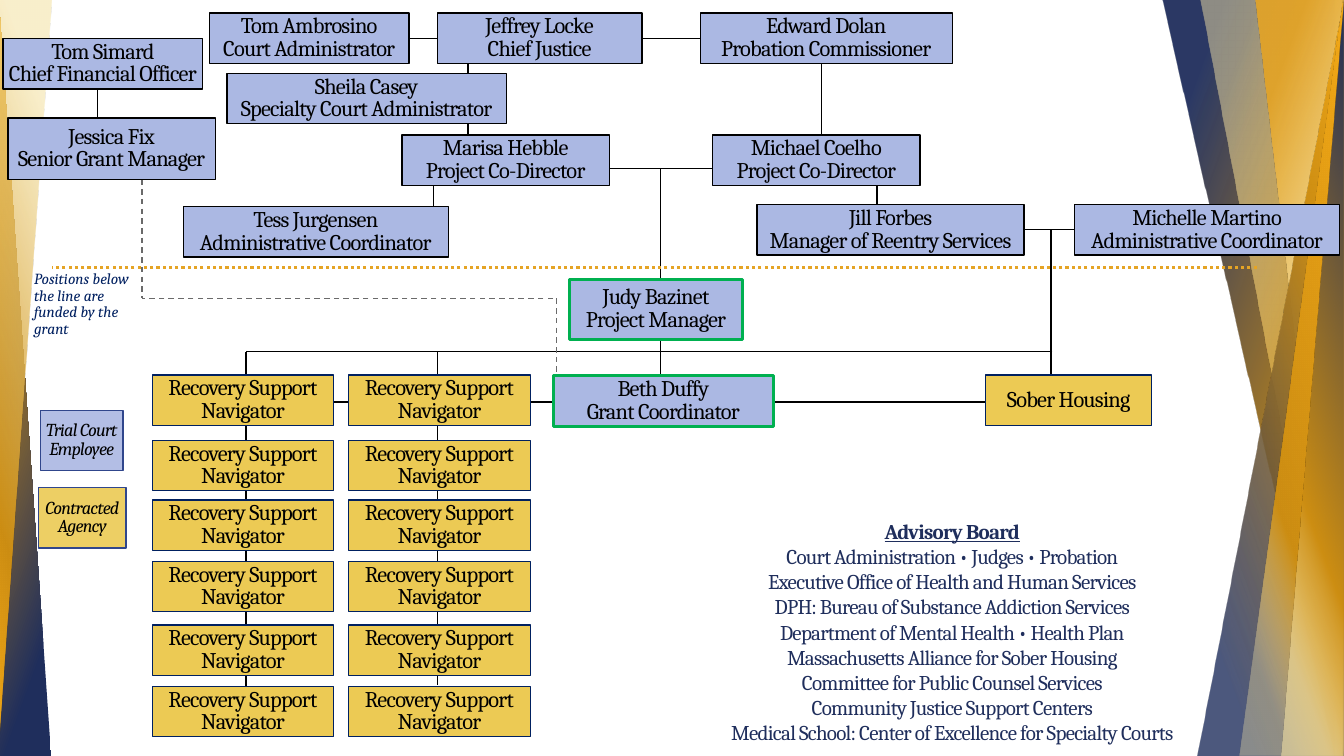
"""Build the organisation chart slide of a court-based recovery grant."""
from dataclasses import dataclass

from pptx import Presentation
from pptx import util as u
from pptx.dml.color import RGBColor
from pptx.enum import dml, shapes, text
from pptx.oxml import parse_xml
from pptx.oxml.ns import qn

NS = 'xmlns:a="http://schemas.openxmlformats.org/drawingml/2006/main"'


@dataclass(frozen=True)
class Theme:
    """Colours, font and sizes."""
    font: str = "Cambria"
    court: str = "ABB8E3"
    agency: str = "ECCA54"
    black: str = "000000"
    green: str = "00B050"
    navy: str = "002060"
    ink: str = "1F2E5C"
    key: str = "30468C"
    gold: str = "E5A425"
    grey: str = "6A6A6A"
    box_pt: float = 16
    key_pt: float = 13
    note_pt: float = 11
    board_pt: float = 15


T = Theme()
W, H = 33.87, 19.05
ROW = 1.27

# left, width, rotation, mirrored, gradient stops (position, colour, opacity)
FACETS = [
    (32, 1.85, 180, False, [(14, "E5A425", 100), (49, "CD8E13", 100), (90, "1F2E5C", 100)]),
    (29.29, 4.34, 180, False, [(14, "1F2E5C", 94), (74, "CD8E13", 100), (100, "F3A917", 100)]),
    (30.25, 3.61, 180, False, [(14, "F5E3A5", 49), (74, "CD8E13", 100), (100, "F3A917", 100)]),
    (31.65, 2.21, 180, False, [(14, "E5A425", 89), (33, "EDC56B", 100), (54, "F7EABA", 100),
                               (100, "F3A917", 100)]),
    (30.18, 3.68, 0, True, [(14, "1F2E5C", 79), (74, "CD8E13", 100), (100, "F3A917", 100)]),
    (31.24, 2.59, 0, True, [(14, "F5E3A5", 37), (34, "CD8E13", 100), (100, "F3A917", 100)]),
    (32.31, 1.55, 0, True, [(14, "F5E3A5", 57), (34, "CD8E13", 100), (100, "1F2E5C", 100)]),
    (-0.03, 1.32, 0, False, [(14, "1F2E5C", 100), (74, "CD8E13", 100), (100, "F3A917", 100)]),
    (-0.03, 1.32, 180, True, [(14, "F5E3A5", 56), (74, "CD8E13", 100), (100, "F3A917", 100)]),
]

LINKS = [
    (11.02, 8.86, 11.02, 17.25), (6.2, 8.86, 6.2, 17.75), (10.92, 4.57, 10.92, 5.69),
    (11.79, 1.35, 11.79, 3.51), (11.58, 0.97, 9.63, 0.97), (18.16, 0.97, 16.18, 0.97),
    (20.7, 1.57, 20.7, 3.86), (18.16, 4.24, 15.37, 4.24), (16.64, 4.24, 16.64, 10.06),
    (27.69, 10.13, 5.59, 10.13), (26.52, 8.86, 6.2, 8.86), (26.49, 9.45, 26.49, 5.79),
    (27.08, 5.79, 25.81, 5.79), (22.1, 4.67, 22.1, 5.16), (2.46, 1.35, 2.46, 2.95),
]
GRANT_LINKS = [(3.58, 4.52, 3.58, 7.52), (14.02, 7.52, 14.02, 9.45), (13.94, 7.52, 3.58, 7.52)]
FUNDING_LINE = (31.67, 6.73, 1.3, 6.73)

# left, top, width, height, lines
COURT_STAFF = [
    (11.02, 0.33, 5.16, ROW, ["Jeffrey Locke", "Chief Justice"]),
    (17.65, 0.33, 6.35, ROW, ["Edward Dolan", "Probation Commissioner"]),
    (5.28, 0.33, 5.03, ROW, ["Tom Ambrosino", "Court Administrator"]),
    (0.08, 0.97, 5.03, ROW, ["Tom Simard", "Chief Financial Officer"]),
    (5.72, 1.85, 7.04, ROW, ["Sheila Casey", "Specialty Court Administrator"]),
    (0.2, 2.97, 5.23, 1.55, ["Jessica Fix", "Senior Grant Manager"]),
    (10.13, 3.4, 5.23, ROW, ["Marisa Hebble", "Project Co-Director"]),
    (17.96, 3.4, 5.23, ROW, ["Michael Coelho", "Project Co-Director"]),
    (4.62, 5.21, 6.68, ROW, ["Tess Jurgensen", "Administrative Coordinator"]),
    (19.08, 5.16, 6.73, ROW, ["Jill Forbes", "Manager of Reentry Services"]),
    (27.08, 5.16, 6.68, ROW, ["Michelle Martino", "Administrative Coordinator"]),
]
GRANT_STAFF = [
    (14.35, 7.04, 4.37, 1.52, ["Judy Bazinet", "Project Manager"]),
    (13.94, 9.47, 5.56, ROW, ["Beth Duffy", "Grant Coordinator"]),
]
HOUSING = (24.84, 9.45, 4.19, ROW, ["Sober Housing"])
NAVIGATOR = ["Recovery Support", "Navigator"]
NAVIGATOR_LEFTS = [3.84, 8.79]
NAVIGATOR_TOPS = [9.45, 11.1, 12.6, 14.15, 15.75, 17.3]
KEY = [
    (1.02, 10.34, 2.08, 1.52, ["Trial Court", "Employee"], T.court),
    (0.97, 12.29, 2.21, 1.52, ["Contracted", "Agency"], T.agency),
]
NOTE = "Positions below the line are funded by the grant"
BOARD = [
    "Advisory Board",
    "Court Administration • Judges • Probation",
    "Executive Office of Health and Human Services",
    "DPH: Bureau of Substance Addiction Services",
    "Department of Mental Health • Health Plan",
    "Massachusetts Alliance for Sober Housing",
    "Committee for Public Counsel Services",
    "Community Justice Support Centers",
    "Medical School: Center of Excellence for Specialty Courts",
]


def rgb(colour):
    return RGBColor.from_string(colour)


def cms(*values):
    return [u.Cm(v) for v in values]


def write(tf, lines, size, colour, italic=False, spacing=1.0, centred=True, tight=True):
    tf.word_wrap = True
    for i, line in enumerate(lines):
        p = tf.paragraphs[0] if i == 0 else tf.add_paragraph()
        p.alignment = text.PP_ALIGN.CENTER if centred else text.PP_ALIGN.LEFT
        p.line_spacing = spacing
        r = p.add_run()
        r.text = line
        r.font.name, r.font.size, r.font.italic = T.font, u.Pt(size), italic
        r.font.color.rgb = rgb(colour)
        if tight:
            r.font._element.set("spc", "-50")


def no_insets(tf):
    tf.margin_left = tf.margin_right = tf.margin_top = tf.margin_bottom = 0


def add_facet(s, left, width, rotation, mirrored, stops):
    sp = s.shapes.add_shape(shapes.MSO_SHAPE.RIGHT_TRIANGLE, *cms(left, 0, width, H))
    sp.shadow.inherit = False
    sp.line.fill.background()
    sp.rotation = rotation
    pr = sp._element.spPr
    if mirrored:
        pr.find(qn("a:xfrm")).set("flipH", "1")
    gs = "".join(f'<a:gs pos="{pos * 1000}"><a:srgbClr val="{c}"><a:alpha val="{a * 1000}"/>'
                 '</a:srgbClr></a:gs>' for pos, c, a in stops)
    sp.fill.background()
    pr.replace(pr.find(qn("a:noFill")), parse_xml(
        f'<a:gradFill {NS} rotWithShape="1"><a:gsLst>{gs}</a:gsLst>'
        f'<a:lin ang="{200 * 60000}" scaled="0"/></a:gradFill>'))


def add_link(s, ends, colour=T.black, weight=1, dash=None):
    cn = s.shapes.add_connector(shapes.MSO_CONNECTOR.STRAIGHT, *cms(*ends))
    cn.line.color.rgb = rgb(colour)
    cn.line.width = u.Pt(weight)
    if dash:
        cn.line.dash_style = dash
    cn._element.spPr.append(parse_xml(f"<a:effectLst {NS}/>"))


def add_box(s, left, top, width, height, lines, fill=T.court, edge=T.black, weight=1,
            size=T.box_pt, italic=False, opacity=100):
    sp = s.shapes.add_shape(shapes.MSO_SHAPE.RECTANGLE, *cms(left, top, width, height))
    sp.shadow.inherit = False
    sp.fill.solid()
    sp.fill.fore_color.rgb = rgb(fill)
    if opacity < 100:
        colour = sp._element.spPr.find(qn("a:solidFill"))[0]
        colour.append(parse_xml(f'<a:alpha {NS} val="{opacity * 1000}"/>'))
    sp.line.color.rgb = rgb(edge)
    sp.line.width = u.Pt(weight)
    tf = sp.text_frame
    no_insets(tf)
    tf.vertical_anchor = text.MSO_ANCHOR.MIDDLE
    write(tf, lines, size, T.black, italic, 0.85)


def main():
    prs = Presentation()
    prs.slide_width, prs.slide_height = cms(W, H)
    s = prs.slides.add_slide(prs.slide_layouts[6])
    for facet in FACETS:
        add_facet(s, *facet)
    for ends in LINKS:
        add_link(s, ends)
    add_link(s, FUNDING_LINE, T.gold, 2.25, dml.MSO_LINE.ROUND_DOT)
    for ends in GRANT_LINKS:
        add_link(s, ends, T.grey, 1, dml.MSO_LINE.DASH)
    for box in COURT_STAFF:
        add_box(s, *box)
    for box in GRANT_STAFF:
        add_box(s, *box, edge=T.green, weight=2.25)
    navigators = [(x, y, 4.57, ROW, NAVIGATOR) for x in NAVIGATOR_LEFTS for y in NAVIGATOR_TOPS]
    for box in [HOUSING, *navigators]:
        add_box(s, *box, fill=T.agency, edge=T.navy, weight=0.75)
    for *box, fill in KEY:
        add_box(s, *box, fill=fill, edge=T.key, size=T.key_pt, italic=True, opacity=90)
    note = s.shapes.add_textbox(*cms(0.61, 6.71, 2.95, 1.96))
    write(note.text_frame, [NOTE], T.note_pt, T.navy, True, 0.9, centred=False, tight=False)
    board = s.shapes.add_textbox(*cms(15.95, 13.06, 16.1, 6.25)).text_frame
    no_insets(board)
    write(board, BOARD, T.board_pt, T.ink)
    title = board.paragraphs[0].runs[0].font
    title.bold = title.underline = True
    prs.save("out.pptx")


if __name__ == "__main__":
    main()
